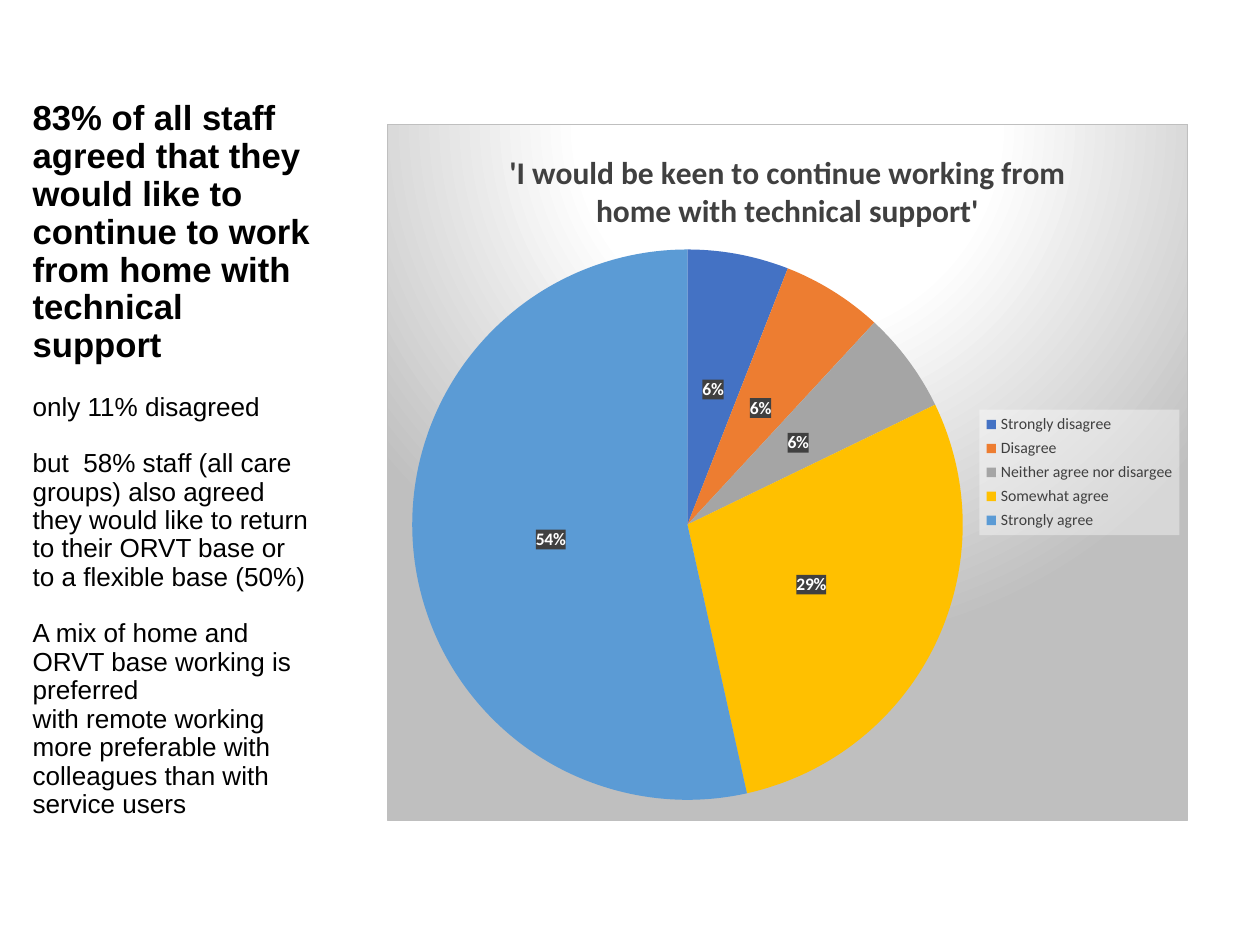
from pptx import Presentation
from pptx import util as u
from pptx.chart import data as chart_data
from pptx.dml.color import RGBColor
from pptx.enum import chart as ch, text
from pptx.oxml import ns, parse_xml

BLACK = RGBColor(0x00, 0x00, 0x00)
WHITE = RGBColor(0xFF, 0xFF, 0xFF)
CHARCOAL = RGBColor(0x40, 0x40, 0x40)
SILVER = RGBColor(0xBF, 0xBF, 0xBF)
ANSWER_COLOURS = [
    RGBColor(0x44, 0x72, 0xC4),
    RGBColor(0xED, 0x7D, 0x31),
    RGBColor(0xA5, 0xA5, 0xA5),
    RGBColor(0xFF, 0xC0, 0x00),
    RGBColor(0x5B, 0x9B, 0xD5),
]

# Wording, size, bold, space before
FINDINGS = [
    ("83% of all staff agreed that they would like to continue to work "
     "from home with technical support", 19.8, True, 0),
    ("only 11% disagreed", 14.9, False, 16),
    ("but  58% staff (all care groups) also agreed they would like to return "
     "to their ORVT base or to a flexible base (50%)", 14.9, False, 16),
    ("A mix of home and ORVT base working is preferred", 14.9, False, 16),
    ("with remote working more preferable with colleagues than with "
     "service users", 14.9, False, 0),
]
QUESTION = "'I would be keen to continue working from home with technical support'"
ANSWERS = {
    "Strongly disagree": 6,
    "Disagree": 6,
    "Neither agree nor disargee": 6,
    "Somewhat agree": 29,
    "Strongly agree": 54,
}


def solid(colour, alpha=100):
    return (f'<a:solidFill><a:srgbClr val="{colour}">'
            f'<a:alpha val="{alpha * 1000}"/></a:srgbClr></a:solidFill>')


def radial_gradient():
    stops = "".join(
        f'<a:gs pos="{pos * 1000}"><a:srgbClr val="{colour}"/></a:gs>'
        for pos, colour in [(0, WHITE), (39, WHITE), (100, SILVER)])
    return (f'<a:gradFill><a:gsLst>{stops}</a:gsLst><a:path path="circle">'
            '<a:fillToRect l="50000" t="-80000" r="50000" b="180000"/>'
            '</a:path></a:gradFill>')


def shape_format(fill, line="<a:ln><a:noFill/></a:ln>"):
    return parse_xml(f'<c:spPr {ns.nsdecls("c", "a")}>{fill}{line}</c:spPr>')


def manual_layout(x, y, w, h, inner=False):
    target = '<c:layoutTarget val="inner"/>' if inner else ""
    sizes = "".join(f'<c:{key} val="{value}"/>'
                    for key, value in zip("xywh", (x, y, w, h)))
    return parse_xml(
        f'<c:layout {ns.nsdecls("c")}><c:manualLayout>{target}'
        f'<c:xMode val="edge"/><c:yMode val="edge"/>{sizes}'
        '</c:manualLayout></c:layout>')


class SlideBuilder:
    text_font = "Arial"
    chart_font = "Calibri"
    line_spacing = 0.91

    def __init__(self, slide):
        self.slide = slide

    def style(self, font, name, size, colour, bold=False):
        font.name, font.size, font.bold = name, u.Pt(size), bold
        font.color.rgb = colour

    def findings(self, left, top, width, height, items):
        box = self.slide.shapes.add_textbox(left, top, width, height)
        frame = box.text_frame
        frame.word_wrap = True
        frame.vertical_anchor = text.MSO_ANCHOR.TOP
        frame.text = "\n".join(item[0] for item in items)
        for paragraph, (_, size, bold, gap) in zip(frame.paragraphs, items):
            paragraph.line_spacing = self.line_spacing
            paragraph.space_before = u.Pt(gap)
            self.style(paragraph.runs[0].font, self.text_font, size, BLACK, bold)

    def pie(self, left, top, width, height, question, answers):
        survey = chart_data.CategoryChartData()
        survey.categories = list(answers)
        survey.add_series("Series 1", list(answers.values()))
        chart = self.slide.shapes.add_chart(
            ch.XL_CHART_TYPE.PIE, left, top, width, height, survey).chart
        self.style(chart.font, self.chart_font, 10, BLACK)

        # Chart area and plot position
        border = f'<a:ln w="9525">{solid(SILVER)}</a:ln>'
        root = chart.element
        root.xpath("c:chart")[0].addnext(shape_format(radial_gradient(), border))
        plot_area = root.xpath("c:chart/c:plotArea")[0]
        for layout in plot_area.xpath("c:layout"):
            plot_area.remove(layout)
        plot_area.insert(0, manual_layout(0.03, 0.18, 0.69, 0.79, inner=True))

        # Question
        chart.has_title = True
        title = chart.chart_title
        title.include_in_layout = False
        title.text_frame.text = question
        self.style(title.text_frame.paragraphs[0].runs[0].font,
                   self.chart_font, 18, CHARCOAL, True)

        # Slices and percentages
        chart.plots[0].vary_by_categories = True
        series = chart.plots[0].series[0]
        for index, colour in enumerate(ANSWER_COLOURS):
            slice_fill = series.points[index].format.fill
            slice_fill.solid()
            slice_fill.fore_color.rgb = colour
        labels = series.data_labels
        labels.show_value = True
        labels.number_format = '0"%"'
        labels.number_format_is_linked = False
        labels.position = ch.XL_LABEL_POSITION.CENTER
        self.style(labels.font, self.chart_font, 10, WHITE, True)
        root.xpath(".//c:dLbls/c:numFmt")[0].addnext(shape_format(solid(CHARCOAL)))

        # Legend
        chart.has_legend = True
        legend = chart.legend
        legend.position = ch.XL_LEGEND_POSITION.RIGHT
        legend.include_in_layout = False
        self.style(legend.font, self.chart_font, 9, CHARCOAL)
        legend_box = root.xpath("c:chart/c:legend")[0]
        for layout in legend_box.xpath("c:layout"):
            legend_box.remove(layout)
        overlay = legend_box.xpath("c:overlay")[0]
        overlay.addprevious(manual_layout(0.74, 0.41, 0.25, 0.18))
        overlay.addnext(shape_format(solid(WHITE, 39)))


def main():
    deck = Presentation()
    deck.slide_width, deck.slide_height = u.Cm(25.4), u.Cm(19.05)
    builder = SlideBuilder(deck.slides.add_slide(deck.slide_layouts[6]))

    # Findings on the left, survey chart on the right
    builder.findings(u.Cm(0.41), u.Cm(1.9), u.Cm(6.15), u.Cm(14.6), FINDINGS)
    builder.pie(u.Cm(7.8), u.Cm(2.49), u.Cm(16.15), u.Cm(14.07),
                QUESTION, ANSWERS)
    deck.save("out.pptx")


if __name__ == "__main__":
    main()
